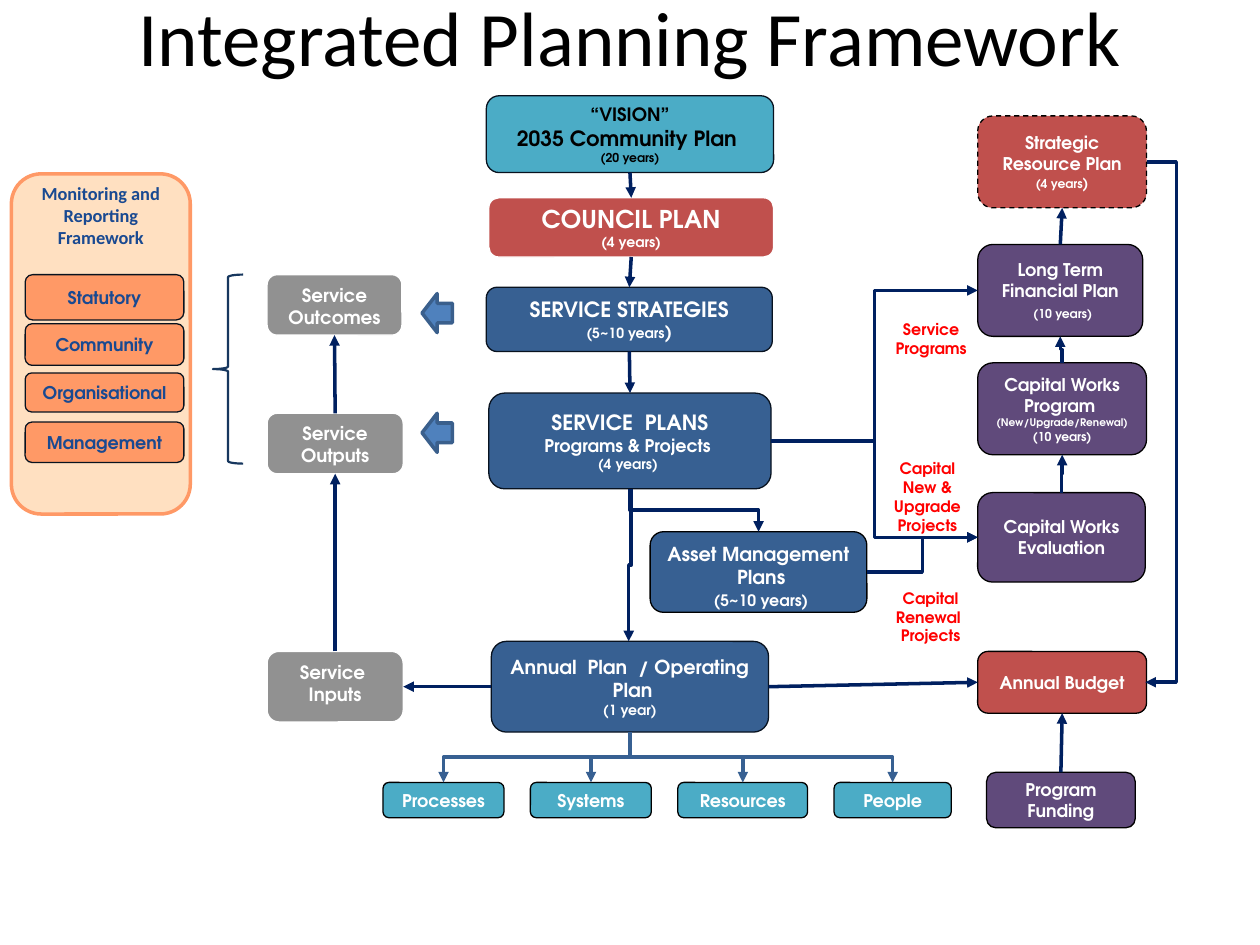
from dataclasses import dataclass

from lxml import etree
from pptx import Presentation, util as u
from pptx.dml.color import RGBColor
from pptx.enum import dml, shapes, text
from pptx.oxml.ns import qn

TOP, LEFT, BOTTOM, RIGHT = range(4)
BOX = shapes.MSO_SHAPE.ROUNDED_RECTANGLE
MIDDLE, UPPER = text.MSO_ANCHOR.MIDDLE, text.MSO_ANCHOR.TOP


@dataclass(frozen=True)
class Theme:
    head_font: str = "Calibri"
    body_font: str = "TeX Gyre Adventor"
    white: str = "FFFFFF"
    black: str = "000000"
    outline: str = "08121F"
    red: str = "C0504D"
    blue: str = "376092"
    teal: str = "4BACC6"
    purple: str = "604A7B"
    navy: str = "002060"
    orange: str = "FF9966"
    peach: str = "FFE0C1"
    royal: str = "194991"
    note: str = "FF0000"
    arrow: str = "4F81BD"
    arrow_line: str = "3A5F8C"
    brace: str = "17375E"
    title: float = 44
    big: float = 14
    head: float = 12
    sub: float = 11
    service: float = 10.5
    body: float = 10
    label: float = 9
    small: float = 8
    tiny: float = 7
    micro: float = 6


T = Theme()


def side(sp, n):
    """Midpoint of one side of a shape, numbered like its connection sites."""
    x = sp.left + sp.width * {LEFT: 0, RIGHT: 1}.get(n, 0.5)
    y = sp.top + sp.height * {TOP: 0, BOTTOM: 1}.get(n, 0.5)
    return int(x), int(y)


class Diagram:
    def __init__(self, s):
        self.s = s

    def title(self, label):
        sp = self.s.shapes.title
        sp.left, sp.top, sp.width, sp.height = map(u.Inches, (0, 0, 10, 0.56))
        self.fill_text(sp.text_frame, [(label, T.title)], T.black, T.head_font, False, MIDDLE)

    def fill_text(self, tf, paras, color, font=T.body_font, bold=True, anchor=UPPER):
        """Each paragraph is a flat tuple: text, size, text, size, ..."""
        tf.word_wrap = True
        tf.vertical_anchor = anchor
        for i, runs in enumerate(paras):
            p = tf.add_paragraph() if i else tf.paragraphs[0]
            p.text = runs[0]
            p.alignment = text.PP_ALIGN.CENTER
            for extra in runs[2::2]:
                p.add_run().text = extra
            for r, size in zip(p.runs, runs[1::2]):
                r.font.name, r.font.size, r.font.bold = font, u.Pt(size), bold
                r.font.color.rgb = RGBColor.from_string(color)

    def shape(self, kind, at, fill, line, width=0.75):
        sp = self.s.shapes.add_shape(kind, *map(u.Inches, at))
        sp.shadow.inherit = False
        if fill:
            sp.fill.solid()
            sp.fill.fore_color.rgb = RGBColor.from_string(fill)
        else:
            sp.fill.background()
        sp.line.color.rgb = RGBColor.from_string(line)
        sp.line.width = u.Pt(width)
        return sp

    def box(self, at, fill, *paras, line=T.black, color=T.white, anchor=MIDDLE):
        sp = self.shape(BOX, at, fill, line)
        self.fill_text(sp.text_frame, paras, color, anchor=anchor)
        return sp

    def service(self, at, *lines):
        paras = [(line, T.service) for line in lines]
        sp = self.box(at, T.black, *paras, line=T.white, anchor=UPPER)
        clr = sp._element.spPr.find(qn("a:solidFill"))[0]
        etree.SubElement(clr, qn("a:alpha"), val="43000")
        return sp

    def note(self, at, *lines):
        sp = self.s.shapes.add_textbox(*map(u.Inches, at))
        self.fill_text(sp.text_frame, [(line, T.label) for line in lines], T.note)
        sp.text_frame.auto_size = text.MSO_AUTO_SIZE.SHAPE_TO_FIT_TEXT

    def connector(self, kind, begin, end, color):
        c = self.s.shapes.add_connector(kind, *map(int, (*begin, *end)))
        c.line.color.rgb = RGBColor.from_string(color)
        c.line.width = u.Pt(2)
        spPr = c._element.spPr
        etree.SubElement(spPr.find(qn("a:ln")), qn("a:tailEnd"), type="triangle")
        etree.SubElement(spPr, qn("a:effectLst"))
        return c

    def arrow(self, a, a_side, b, b_side):
        c = self.connector(shapes.MSO_CONNECTOR.STRAIGHT, side(a, a_side), side(b, b_side), T.navy)
        c.begin_connect(a, a_side)
        c.end_connect(b, b_side)

    def elbow(self, begin, end, color=T.navy, adjust=None):
        """Elbow that leaves and arrives horizontally."""
        c = self.connector(shapes.MSO_CONNECTOR.ELBOW, begin, end, color)
        if adjust is not None:
            geom = c._element.spPr.find(qn("a:prstGeom"))
            av = geom.find(qn("a:avLst"))
            av = etree.SubElement(geom, qn("a:avLst")) if av is None else av
            etree.SubElement(av, qn("a:gd"), name="adj1", fmla=f"val {round(adjust * 100000)}")
        return c

    def drop(self, begin, end, color=T.navy):
        """Elbow that leaves and arrives vertically: a horizontal one turned about its centre."""
        (x1, y1), (x2, y2) = begin, end
        cx, cy = (x1 + x2) / 2, (y1 + y2) / 2
        turn = 1 if (x2 - x1) * (y2 - y1) < 0 else -1
        dx, dy = turn * (x2 - x1) / 2, turn * (y2 - y1) / 2
        c = self.elbow((cx - dy, cy + dx), (cx + dy, cy - dx), color)
        c._element.spPr.find(qn("a:xfrm")).set("rot", str((90 if turn > 0 else 270) * 60000))


def main():
    prs = Presentation()
    prs.slide_width, prs.slide_height = u.Inches(10), u.Inches(7.5)
    d = Diagram(prs.slides.add_slide(prs.slide_layouts[5]))
    d.title("Integrated Planning Framework")

    # Planning column
    vision = d.box((3.86, 0.76, 2.28, 0.61), T.teal, ("“VISION”", T.service),
                   ("2035 Community Plan ", T.head), ("(20 years)", T.tiny),
                   line=T.outline, color=T.black)
    council = d.box((3.88, 1.57, 2.26, 0.47), T.red, ("COUNCIL PLAN", T.big),
                    ("(4 years)", T.small), line=T.white)
    strategies = d.box((3.86, 2.28, 2.27, 0.51), T.blue, ("SERVICE STRATEGIES", T.head),
                       ("(5~10 years", T.small, ")", T.body), line=T.outline)
    plans = d.box((3.88, 3.12, 2.24, 0.76), T.blue, ("SERVICE  PLANS", T.head),
                  ("Programs & Projects ", T.body), ("(4 years) ", T.small), line=T.outline)
    assets = d.box((5.16, 4.22, 1.72, 0.64), T.blue, ("Asset Management  Plans", T.sub),
                   (" ", T.service, "(5~10 years)", T.label), anchor=UPPER)
    annual = d.box((3.9, 5.09, 2.2, 0.72), T.blue, ("Annual  Plan  / Operating  Plan", T.sub),
                   ("(1 year)", T.small), line=T.outline)

    # Resources column
    strategic = d.box((7.76, 0.92, 1.34, 0.73), T.red, ("Strategic Resource Plan", T.body),
                      ("(4 years", T.tiny, ")", T.small))
    strategic.line.dash_style = dml.MSO_LINE.DASH
    financial = d.box((7.76, 1.94, 1.31, 0.73), T.purple, ("Long Term Financial Plan", T.body),
                      (" ", T.body, "(10 years)", T.tiny))
    program = d.box((7.76, 2.88, 1.34, 0.73), T.purple, ("Capital Works Program ", T.body),
                    ("(New/Upgrade/Renewal)", T.micro), ("(10 years)", T.tiny))
    evaluation = d.box((7.76, 3.91, 1.33, 0.71), T.purple, ("Capital Works Evaluation", T.body))
    budget = d.box((7.76, 5.17, 1.34, 0.49), T.red, ("Annual Budget", T.body))
    funding = d.box((7.83, 6.13, 1.18, 0.44), T.purple, ("Program Funding", T.body))

    # Service column
    outcomes = d.service((2.12, 2.18, 1.07, 0.48), "Service Outcomes")
    outputs = d.service((2.12, 3.28, 1.08, 0.48), "Service Outputs")
    inputs = d.service((2.12, 5.17, 1.08, 0.56), "Service ", "Inputs")
    for y in (2.33, 3.28):
        d.shape(shapes.MSO_SHAPE.LEFT_ARROW, (3.35, y, 0.24, 0.31), T.arrow, T.arrow_line, 2)

    # Delivery row
    x = 3.04
    for name, w in (("Processes", 0.96), ("Systems", 0.96), ("Resources", 1.03), ("People", 0.93)):
        sp = d.box((x, 6.21, w, 0.28), T.teal, (name, T.body), anchor=UPPER)
        d.drop(side(annual, BOTTOM), side(sp, TOP), T.blue)
        x += w + 0.21

    # Monitoring panel
    panel = d.shape(BOX, (0.09, 1.38, 1.42, 2.7), T.peach, T.orange, 2)
    tf = panel.text_frame
    tf.margin_left = tf.margin_right = tf.margin_top = tf.margin_bottom = 0
    d.fill_text(tf, [("Monitoring and Reporting Framework", T.service)], T.royal, T.head_font)
    reports = (("Statutory", 0.36), ("Community", 0.33), ("Organisational", 0.31), ("Management", 0.32))
    for i, (name, h) in enumerate(reports):
        d.box((0.2, 2.18 + 0.39 * i, 1.26, h), T.orange, (name, T.body),
              line=T.outline, color=T.royal)
    d.shape(shapes.MSO_SHAPE.LEFT_BRACE, (1.69, 2.18, 0.24, 1.5), None, T.brace, 1.25)

    # Flows
    for a, a_side, b, b_side in (
        (vision, BOTTOM, council, TOP), (council, BOTTOM, strategies, TOP),
        (strategies, BOTTOM, plans, TOP), (financial, TOP, strategic, BOTTOM),
        (funding, TOP, budget, BOTTOM), (annual, LEFT, inputs, RIGHT),
        (annual, RIGHT, budget, LEFT), (inputs, TOP, outputs, BOTTOM),
        (outputs, TOP, outcomes, BOTTOM),
    ):
        d.arrow(a, a_side, b, b_side)
    for a, b in ((plans, financial), (plans, evaluation), (assets, evaluation)):
        d.elbow(side(a, RIGHT), side(b, LEFT))
    for a, b in ((evaluation, program), (program, financial)):
        d.drop(side(a, TOP), side(b, BOTTOM))
    d.drop(side(plans, BOTTOM), side(assets, TOP))
    d.drop((u.Inches(5.01), u.Inches(3.88)), (u.Inches(4.99), u.Inches(5.09)))
    x, y = side(budget, RIGHT)
    d.elbow(side(strategic, RIGHT), (x - u.Inches(0.01), y), adjust=-24)

    d.note((6.97, 2.49, 0.84, 0.4), "Service Programs")
    d.note((6.97, 3.59, 0.78, 0.71), "Capital New & Upgrade Projects")
    d.note((6.81, 4.62, 1.15, 0.56), "Capital Renewal ", "Projects")
    prs.save("out.pptx")


if __name__ == "__main__":
    main()
